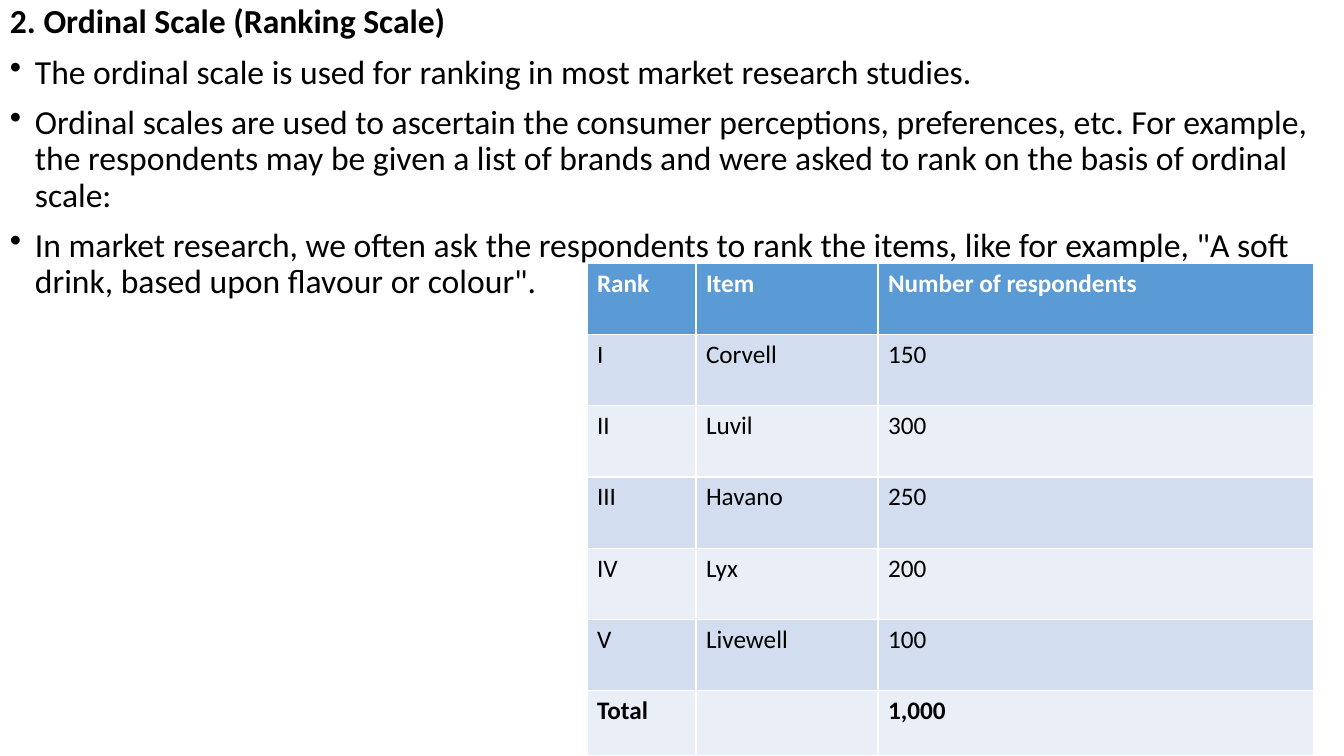
from lxml import etree
from pptx import Presentation
from pptx.dml.color import RGBColor
from pptx.oxml.ns import qn
from pptx.util import Pt

PX = 914400 / 100.8
FONT = "Calibri"
BLACK, WHITE = "000000", "FFFFFF"
HEADER_BLUE = "5B9BD5"
BANDS = ("EAEFF7", "D2DEEF")
HANGING = 25

HEADING = "2. Ordinal Scale (Ranking Scale)"
POINTS = [
    "The ordinal scale is used for ranking in most market research studies.",
    "Ordinal scales are used to ascertain the consumer perceptions, preferences, etc. "
    "For example, the respondents may be given a list of brands and were asked to rank "
    "on the basis of ordinal scale:",
    "In market research, we often ask the respondents to rank the items, like for "
    "example, \"A soft drink, based upon flavour or colour\".",
]
RANKING = [
    ("Rank", "Item", "Number of respondents"),
    ("I", "Corvell", "150"),
    ("II", "Luvil", "300"),
    ("III", "Havano", "250"),
    ("IV", "Lyx", "200"),
    ("V", "Livewell", "100"),
    ("Total", "", "1,000"),
]
COLUMN_WIDTHS = (109, 182, 436)
FULL_ROWS_HEIGHT = 428
LAST_ROW_HEIGHT = 65


def px(length):
    return round(length * PX)


def color(value):
    return RGBColor.from_string(value)


def set_font(para, size, value, bold=False):
    para.font.name = FONT
    para.font.size = Pt(size)
    para.font.bold = bold
    para.font.color.rgb = color(value)


def set_hanging(para, bullet=None):
    """Indent all lines but the first, with an optional bullet in the gap."""
    properties = para._p.get_or_add_pPr()
    properties.set("marL", str(px(HANGING)))
    properties.set("indent", str(-px(HANGING)))
    if bullet:
        properties.insert_element_before(
            properties.makeelement(qn("a:buChar"), {"char": bullet}),
            "a:tabLst", "a:defRPr", "a:extLst")


def add_points(page, left, top, width, height):
    frame = page.shapes.add_textbox(px(left), px(top), px(width), px(height)).text_frame
    frame.word_wrap = True
    for index, text in enumerate([HEADING] + POINTS):
        para = frame.add_paragraph() if index else frame.paragraphs[0]
        para.text = text
        para.line_spacing = 0.9
        para.space_before = Pt(10)
        set_font(para, 24, BLACK, bold=index == 0)
        set_hanging(para, "•" if index else None)


def set_borders(cell, value, width):
    properties = cell._tc.get_or_add_tcPr()
    for position, side in enumerate(("a:lnL", "a:lnR", "a:lnT", "a:lnB")):
        line = properties.makeelement(qn(side), {"w": str(Pt(width))})
        fill = etree.SubElement(line, qn("a:solidFill"))
        etree.SubElement(fill, qn("a:srgbClr"), val=value)
        properties.insert(position, line)


def add_ranking_table(page, left, top):
    last = len(RANKING) - 1
    table = page.shapes.add_table(
        len(RANKING), len(COLUMN_WIDTHS), px(left), px(top),
        px(sum(COLUMN_WIDTHS)), px(FULL_ROWS_HEIGHT + LAST_ROW_HEIGHT)).table
    for column, width in zip(table.columns, COLUMN_WIDTHS):
        column.width = px(width)
    for index, (row, values) in enumerate(zip(table.rows, RANKING)):
        row.height = px(LAST_ROW_HEIGHT if index == last else FULL_ROWS_HEIGHT / last)
        for cell, value in zip(row.cells, values):
            cell.text = value
            cell.fill.solid()
            cell.fill.fore_color.rgb = color(BANDS[index % 2] if index else HEADER_BLUE)
            set_font(cell.text_frame.paragraphs[0], 18,
                     BLACK if index else WHITE, bold=index in (0, last))
            set_borders(cell, WHITE, 1)


def main():
    deck = Presentation()
    deck.slide_width, deck.slide_height = px(1344), px(756)
    page = deck.slides.add_slide(deck.slide_layouts[6])
    add_points(page, 0, 0, 1331, 756)
    add_ranking_table(page, 587, 263)
    deck.save("out.pptx")


if __name__ == "__main__":
    main()
